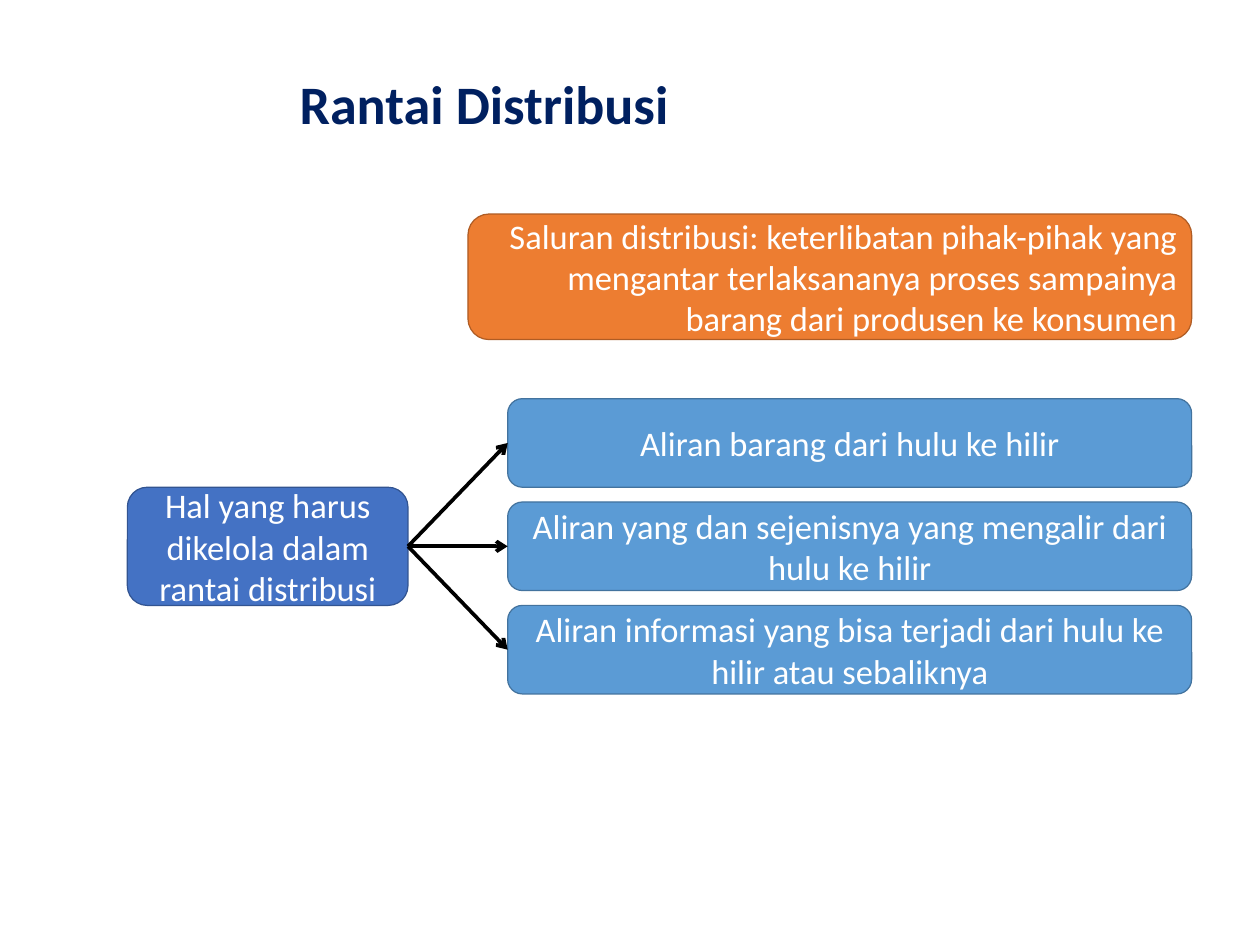
"""Build the slide about the distribution chain and the flows it manages."""
from lxml import etree
from pptx import Presentation
from pptx.dml.color import RGBColor
from pptx.enum.shapes import MSO_CONNECTOR, MSO_SHAPE
from pptx.enum.text import MSO_ANCHOR, MSO_AUTO_SIZE, PP_ALIGN
from pptx.oxml.ns import qn
from pptx.util import Pt

EMU_PER_PX = 9525
TITLE_ONLY = 5
FONT = "Calibri"
ROUNDED = MSO_SHAPE.ROUNDED_RECTANGLE
STRAIGHT = MSO_CONNECTOR.STRAIGHT
MIDDLE = MSO_ANCHOR.MIDDLE
NO_FIT = MSO_AUTO_SIZE.NONE
LEFT, CENTER, RIGHT = PP_ALIGN.LEFT, PP_ALIGN.CENTER, PP_ALIGN.RIGHT
LEFT_SIDE, RIGHT_SIDE = 1, 3

FLOWS = [
    "Aliran barang dari hulu ke hilir",
    "Aliran yang dan sejenisnya yang mengalir dari hulu ke hilir",
    "Aliran informasi yang bisa terjadi dari hulu ke hilir atau sebaliknya",
]
FLOW_TOP, FLOW_PITCH = 432, 112


def px(length):
    """Turn pixels into EMU."""
    return length * EMU_PER_PX


def color(hex_value):
    """Turn a hex string into a colour."""
    return RGBColor.from_string(hex_value)


def write(frame, text, size, hex_value, align, bold=False):
    """Put one formatted run into a vertically centred text frame."""
    frame.word_wrap = True
    frame.auto_size = NO_FIT
    frame.vertical_anchor = MIDDLE
    paragraph = frame.paragraphs[0]
    paragraph.alignment = align
    run = paragraph.add_run()
    run.text = text
    run.font.name = FONT
    run.font.size = Pt(size)
    run.font.bold = bold
    run.font.color.rgb = color(hex_value)
    return paragraph


def set_title(slide, text):
    """Place and fill the title placeholder."""
    title = slide.shapes.title
    title.left, title.top, title.width, title.height = map(px, (315, 56, 1050, 120))
    paragraph = write(title.text_frame, text, 44, "002060", LEFT, bold=True)
    paragraph.line_spacing = 0.9


def add_box(slide, bounds, text, fill, outline, align=CENTER):
    """Add a rounded box with white text."""
    box = slide.shapes.add_shape(ROUNDED, *map(px, bounds))
    box.shadow.inherit = False
    box.fill.solid()
    box.fill.fore_color.rgb = color(fill)
    box.line.color.rgb = color(outline)
    box.line.width = Pt(1)
    write(box.text_frame, text, 28, "FFFFFF", align)
    return box


def add_arrow(slide, source, target):
    """Join the right side of one box to the left side of another."""
    arrow = slide.shapes.add_connector(STRAIGHT, 0, 0, 0, 0)
    arrow.begin_connect(source, RIGHT_SIDE)
    arrow.end_connect(target, LEFT_SIDE)
    arrow.line.color.rgb = color("000000")
    arrow.line.width = Pt(3)
    etree.SubElement(arrow.line._get_or_add_ln(), qn("a:tailEnd"), type="arrow")
    etree.SubElement(arrow._element.spPr, qn("a:effectLst"))


def main():
    """Build and save the slide."""
    deck = Presentation()
    deck.slide_width, deck.slide_height = px(1365), px(1024)
    slide = deck.slides.add_slide(deck.slide_layouts[TITLE_ONLY])
    set_title(slide, "Rantai Distribusi")
    add_box(
        slide, (507, 232, 784, 136),
        "Saluran distribusi: keterlibatan pihak-pihak yang mengantar "
        "terlaksananya proses sampainya barang dari produsen ke konsumen",
        "ED7D31", "AF5C24", RIGHT,
    )
    managed = add_box(
        slide, (138, 528, 304, 128),
        "Hal yang harus dikelola dalam rantai distribusi", "4472C4", "325491",
    )
    flow_boxes = [
        add_box(slide, (550, FLOW_TOP + row * FLOW_PITCH, 741, 96),
                text, "5B9BD5", "43739E")
        for row, text in enumerate(FLOWS)
    ]
    for flow_box in flow_boxes:
        add_arrow(slide, managed, flow_box)
    deck.save("out.pptx")


if __name__ == "__main__":
    main()
